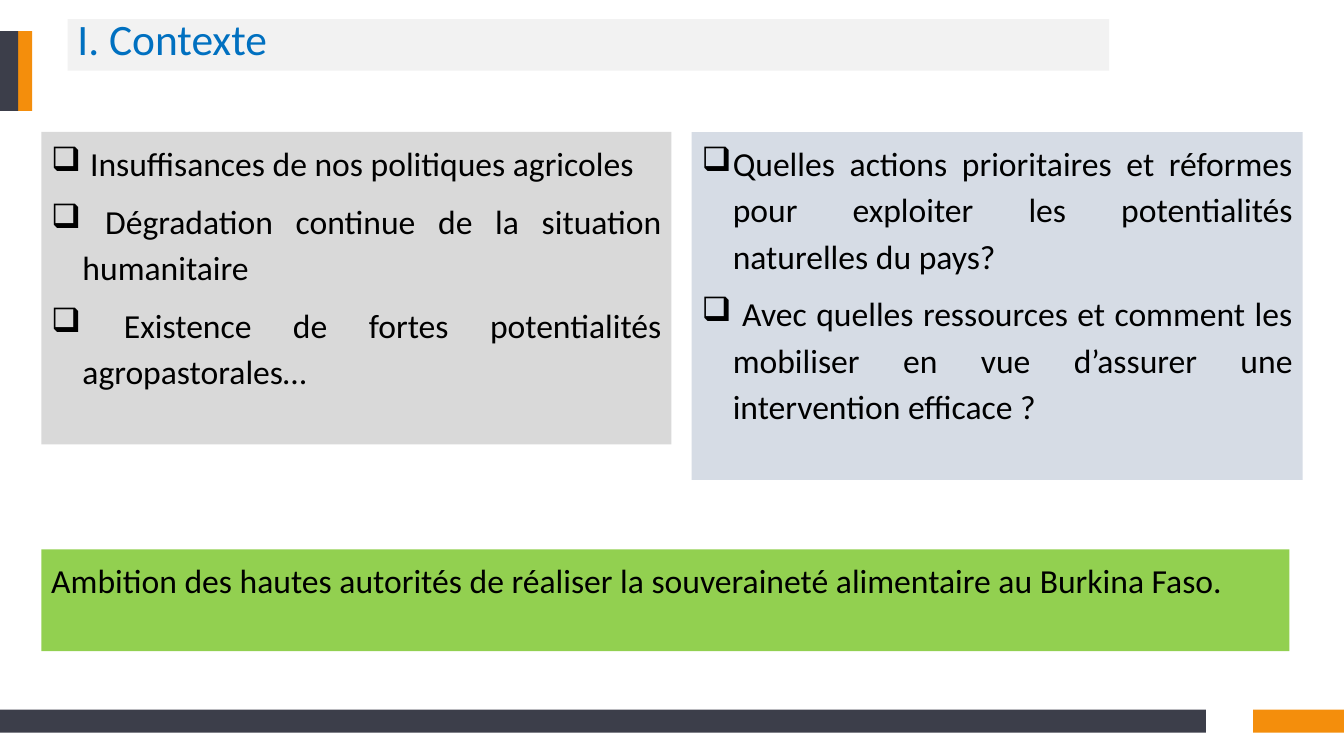
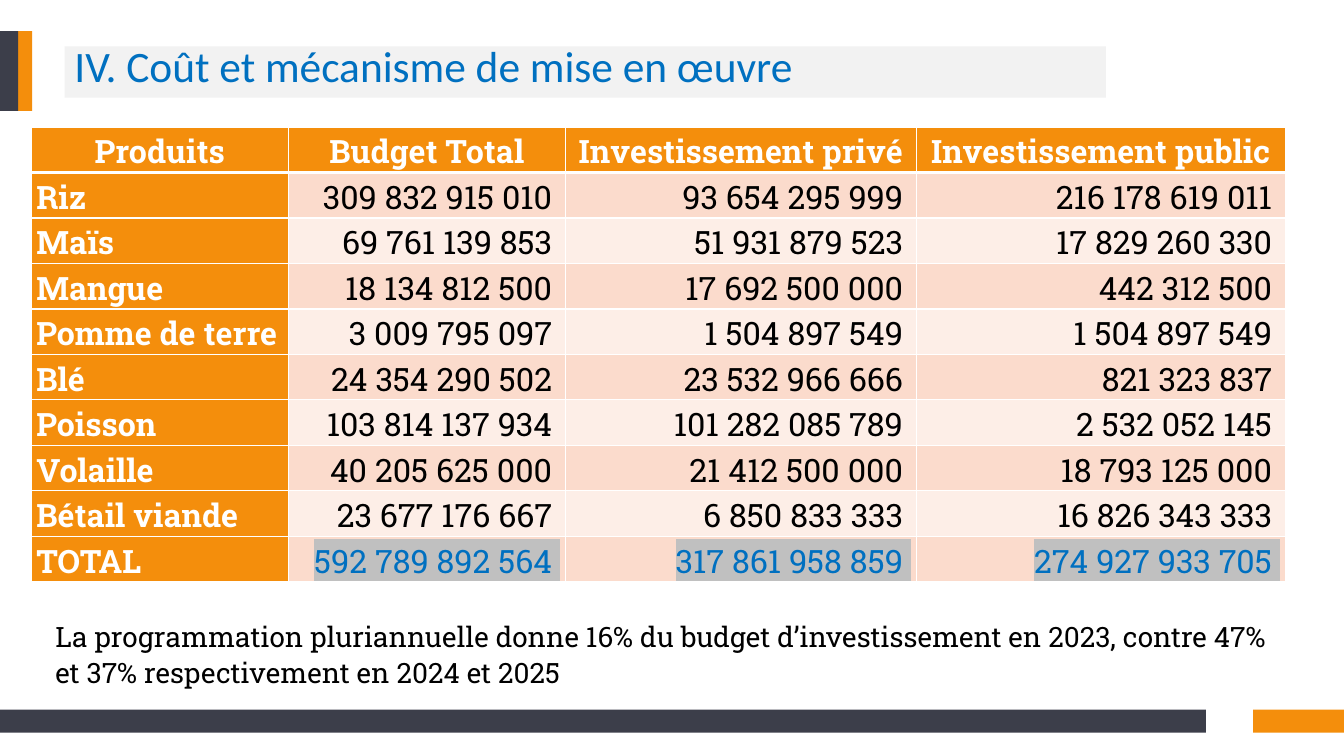
from lxml.etree import SubElement
from pptx import Presentation
from pptx.dml.color import RGBColor
from pptx.enum.shapes import MSO_SHAPE as Preset
from pptx.enum.text import MSO_ANCHOR as Anchor, PP_ALIGN as Align
from pptx.oxml import parse_xml
from pptx.oxml.ns import nsdecls, qn
from pptx.util import Pt

PX = 9144
BLACK = RGBColor(0x00, 0x00, 0x00)
WHITE = RGBColor(0xFF, 0xFF, 0xFF)
ORANGE = RGBColor(0xF4, 0x8E, 0x0C)
SLATE = RGBColor(0x3C, 0x3E, 0x4A)
BLUE = RGBColor(0x00, 0x70, 0xC0)
TITLE_GRAY = RGBColor(0xF2, 0xF2, 0xF2)
PANEL_GRAY = RGBColor(0xD9, 0xD9, 0xD9)
PANEL_BLUE = RGBColor(0xD6, 0xDC, 0xE5)
GREEN = RGBColor(0x92, 0xD0, 0x50)
HIGHLIGHT = RGBColor(0xC0, 0xC0, 0xC0)
ROW_TINTS = (RGBColor(0xFB, 0xDB, 0xCC), RGBColor(0xFD, 0xEE, 0xE7))

BANDS = (
    ((0, 31, 32, 79), ORANGE),
    ((0, 31, 18, 79), SLATE),
    ((1243, 704, 90, 23), ORANGE),
    ((0, 704, 1196, 23), SLATE),
)

TITLE_FONT = {"name": "Calibri", "size": Pt(31)}
BODY_FONT = {"name": "Calibri", "size": Pt(24)}
TABLE_FONT = {"name": "Roboto Slab", "size": Pt(23)}
NOTE_FONT = {"name": "Roboto Slab", "size": Pt(20)}
TITLE_SPACING = {"alignment": Align.LEFT, "line_spacing": 0.7, "space_before": Pt(10)}
PANEL_SPACING = {"alignment": Align.JUSTIFY, "line_spacing": 1.15, "space_after": Pt(8)}
TABLE_SPACING = {"line_spacing": 1.07, "space_after": Pt(8)}

WEAKNESSES = (
    " Insuffisances de nos politiques agricoles",
    " Dégradation continue de la situation humanitaire",
    " Existence de fortes potentialités agropastorales…",
)
QUESTIONS = (
    "Quelles actions prioritaires et réformes pour exploiter les potentialités naturelles du pays?",
    " Avec quelles ressources et comment les mobiliser en vue d’assurer une intervention efficace ?",
)
AMBITION = "Ambition des hautes autorités de réaliser la souveraineté alimentaire au Burkina Faso."
PROGRAMME = (
    "La programmation pluriannuelle donne 16% du budget d’investissement en 2023, "
    "contre 47% et 37% respectivement en 2024 et 2025"
)

COLUMN_WIDTHS = (255, 275, 348, 366)
ROW_HEIGHT = 45
HEADINGS = ("Produits", "Budget Total", "Investissement privé", "Investissement public")
BUDGETS = (
    ("Riz", 309832915010, 93654295999, 216178619011),
    ("Maïs", 69761139853, 51931879523, 17829260330),
    ("Mangue", 18134812500, 17692500000, 442312500),
    ("Pomme de terre", 3009795097, 1504897549, 1504897549),
    ("Blé", 24354290502, 23532966666, 821323837),
    ("Poisson", 103814137934, 101282085789, 2532052145),
    ("Volaille", 40205625000, 21412500000, 18793125000),
    ("Bétail viande", 23677176667, 6850833333, 16826343333),
    ("TOTAL", 592789892564, 317861958859, 274927933705),
)


def to_emu(*lengths):
    return [length * PX for length in lengths]


def apply_format(target, values):
    for name, value in values.items():
        setattr(target, name, value)


def fill_solid(target, color):
    target.fill.solid()
    target.fill.fore_color.rgb = color


def write_paragraph(paragraph, text, font, color, spacing):
    run = paragraph.add_run()
    run.text = text
    apply_format(run.font, font)
    run.font.color.rgb = color
    apply_format(paragraph, spacing)
    return run


def write_lines(shape, lines, font, color, spacing, anchor=Anchor.TOP, bulleted=False):
    frame = shape.text_frame
    apply_format(frame, {"word_wrap": True, "vertical_anchor": anchor})
    for index, line in enumerate(lines):
        paragraph = frame.add_paragraph() if index else frame.paragraphs[0]
        write_paragraph(paragraph, line, font, color, spacing)
        if bulleted:
            add_bullet(paragraph)


def add_bullet(paragraph, indent=31):
    properties = paragraph._p.get_or_add_pPr()
    properties.set("marL", str(indent * PX))
    properties.set("indent", str(-indent * PX))
    SubElement(properties, qn("a:buChar"), char="❑")


def add_rectangle(slide, box, color):
    shape = slide.shapes.add_shape(Preset.RECTANGLE, *to_emu(*box))
    shape.shadow.inherit = False
    fill_solid(shape, color)
    shape.line.fill.background()
    return shape


def add_titled_slide(presentation, title, left, top):
    slide = presentation.slides.add_slide(presentation.slide_layouts[6])
    for box, color in BANDS:
        add_rectangle(slide, box, color)
    shape = add_rectangle(slide, (left, top, 1033, 51), TITLE_GRAY)
    write_lines(shape, [title], TITLE_FONT, BLUE, TITLE_SPACING, Anchor.MIDDLE)
    return slide


def add_panel(slide, box, color, lines, bulleted=False):
    shape = add_rectangle(slide, box, color)
    write_lines(shape, lines, BODY_FONT, BLACK, PANEL_SPACING, bulleted=bulleted)


def add_note(slide, box, text):
    shape = slide.shapes.add_textbox(*to_emu(*box))
    write_lines(shape, [text], NOTE_FONT, BLACK, TABLE_SPACING)


def highlight(run, color):
    mark = parse_xml(f'<a:highlight {nsdecls("a")}><a:srgbClr val="{color}"/></a:highlight>')
    run._r.get_or_add_rPr().find(qn("a:solidFill")).addnext(mark)


def set_borders(cell, widths):
    properties = cell._tc.get_or_add_tcPr()
    for index, (side, width) in enumerate(zip("LRTB", widths)):
        border = parse_xml(
            f'<a:ln{side} {nsdecls("a")} w="{Pt(width)}"><a:solidFill>'
            f'<a:srgbClr val="{WHITE}"/></a:solidFill></a:ln{side}>'
        )
        properties.insert(index, border)


def write_cell(cell, text, fill, color, bold, alignment, anchor):
    margin = 5 * PX
    apply_format(cell, {
        "margin_left": margin, "margin_right": margin,
        "margin_top": 0, "margin_bottom": 0, "vertical_anchor": anchor,
    })
    fill_solid(cell, fill)
    return write_paragraph(
        cell.text_frame.paragraphs[0], text, {**TABLE_FONT, "bold": bold},
        color, {**TABLE_SPACING, "alignment": alignment},
    )


def write_budget_row(table, row, values):
    label, *amounts = values
    write_cell(table.cell(row, 0), label, ORANGE, WHITE, True, Align.LEFT, Anchor.BOTTOM)
    is_total = row == len(BUDGETS)
    for column, amount in enumerate(amounts, 1):
        text = f"{amount:,} ".replace(",", " ")
        run = write_cell(
            table.cell(row, column), text, ROW_TINTS[(row - 1) % 2],
            BLUE if is_total else BLACK, False, Align.RIGHT, Anchor.BOTTOM,
        )
        if is_total:
            highlight(run, HIGHLIGHT)


def add_budget_table(slide, left, top):
    rows = len(BUDGETS) + 1
    size = sum(COLUMN_WIDTHS), rows * ROW_HEIGHT
    frame = slide.shapes.add_table(rows, len(HEADINGS), *to_emu(left, top, *size))
    table = frame.table
    apply_format(table, {"first_row": False, "horz_banding": False})
    for column, width in zip(table.columns, COLUMN_WIDTHS):
        column.width = width * PX
    for row in table.rows:
        row.height = ROW_HEIGHT * PX
    for column, heading in enumerate(HEADINGS):
        write_cell(table.cell(0, column), heading, ORANGE, WHITE, True, Align.CENTER, Anchor.TOP)
    for row, values in enumerate(BUDGETS, 1):
        write_budget_row(table, row, values)
    for row in range(rows):
        for column in range(len(HEADINGS)):
            set_borders(table.cell(row, column), (1, 1, 3 if row == 1 else 1, 3 if row == 0 else 1))


def add_context_slide(presentation):
    slide = add_titled_slide(presentation, "I. Contexte", 67, 19)
    add_panel(slide, (41, 131, 625, 310), PANEL_GRAY, WEAKNESSES, bulleted=True)
    add_panel(slide, (686, 131, 606, 345), PANEL_BLUE, QUESTIONS, bulleted=True)
    add_panel(slide, (41, 545, 1238, 101), GREEN, [AMBITION])


def add_cost_slide(presentation):
    slide = add_titled_slide(presentation, "IV. Coût et mécanisme de mise en œuvre", 64, 46)
    add_budget_table(slide, 31, 126)
    add_note(slide, (45, 607, 1230, 81), PROGRAMME)


def main():
    presentation = Presentation()
    apply_format(presentation, {"slide_width": 1333 * PX, "slide_height": 750 * PX})
    add_context_slide(presentation)
    add_cost_slide(presentation)
    presentation.save("out.pptx")


if __name__ == "__main__":
    main()
